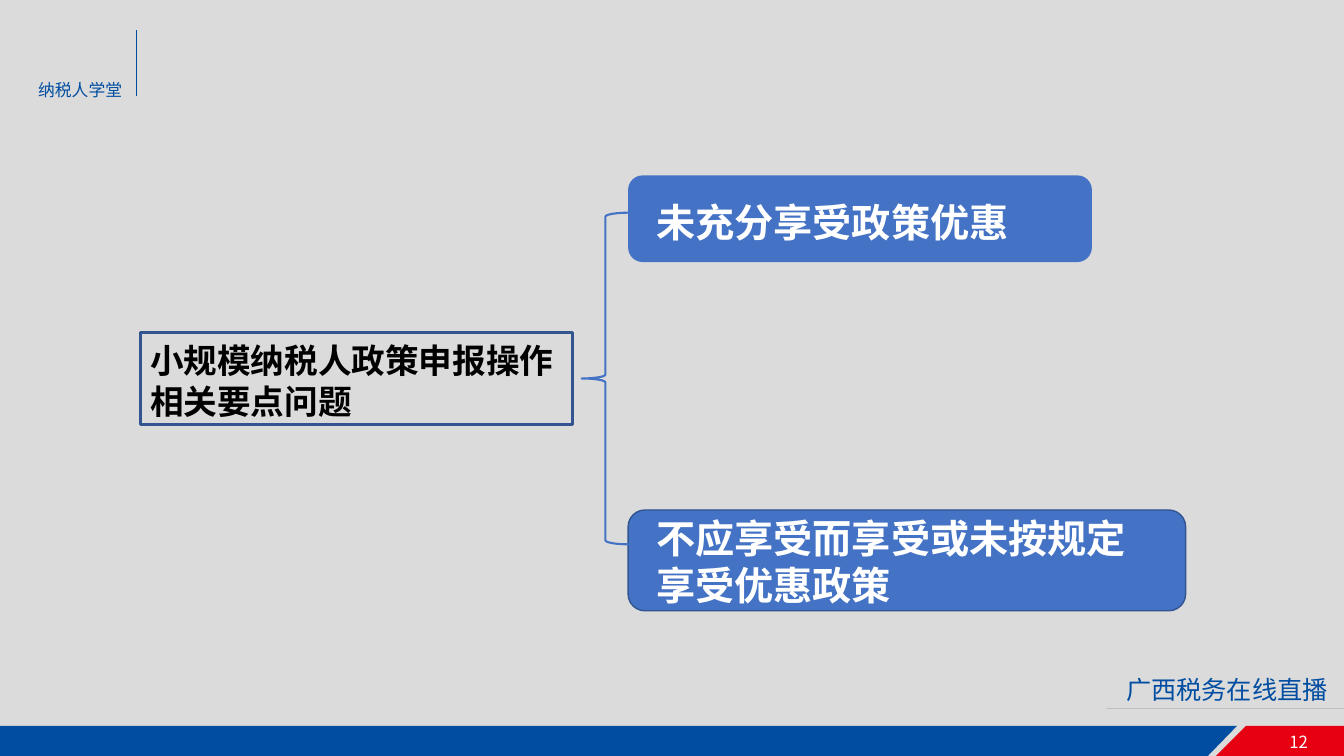
from lxml import etree
from pptx import Presentation
from pptx.dml.color import RGBColor
from pptx.enum.shapes import MSO_CONNECTOR, MSO_SHAPE
from pptx.enum.text import MSO_ANCHOR, PP_ALIGN
from pptx.oxml.ns import qn
from pptx.util import Inches, Pt

FONT = "Noto Sans CJK SC"
NAVY, RED, GREY = "004DA1", "E60012", "BFBFBF"
BLUE, OUTLINE = "4472C4", "325491"
WHITE, BLACK, BACKGROUND = "FFFFFF", "000000", "DBDBDB"
STRAIGHT = MSO_CONNECTOR.STRAIGHT
RECTANGLE = MSO_SHAPE.RECTANGLE
ROUNDED = MSO_SHAPE.FLOWCHART_ALTERNATE_PROCESS
BRACE = MSO_SHAPE.LEFT_BRACE
TOP, LEFT = MSO_ANCHOR.TOP, PP_ALIGN.LEFT


def rgb(color):
    return RGBColor.from_string(color)


def style(shape, fill=None, line=None, width=1):
    shape.shadow.inherit = False
    if fill:
        shape.fill.solid()
        shape.fill.fore_color.rgb = rgb(fill)
    else:
        shape.fill.background()
    if line:
        shape.line.color.rgb = rgb(line)
        shape.line.width = Pt(width)
    else:
        shape.line.fill.background()


def write(frame, lines, size, color, bold=False):
    frame.word_wrap = True
    frame.vertical_anchor = TOP
    # Fixed line pitch, with the first line lowered in proportion to its size
    frame.margin_top = Inches(0.05 + 0.08 * size / 72)
    for index, line in enumerate(lines):
        paragraph = frame.add_paragraph() if index else frame.paragraphs[0]
        paragraph.text = line
        paragraph.alignment = LEFT
        paragraph.line_spacing = Pt(1.2 * size)
        font = paragraph.font
        font.name, font.size, font.bold = FONT, Pt(size), bold
        font.color.rgb = rgb(color)
        properties = paragraph._p.pPr.find(qn("a:defRPr"))
        east_asian = etree.SubElement(properties, qn("a:ea"))
        east_asian.set("typeface", FONT)


def add_label(slide, box, text, size, color, bold=False):
    label = slide.shapes.add_textbox(*map(Inches, box))
    write(label.text_frame, [text], size, color, bold)


def add_box(slide, kind, box, fill=None, line=None, width=1):
    shape = slide.shapes.add_shape(kind, *map(Inches, box))
    style(shape, fill, line, width)
    return shape


def add_rule(slide, start, end, color):
    rule = slide.shapes.add_connector(STRAIGHT, *map(Inches, start + end))
    rule.line.color.rgb = rgb(color)
    rule.line.width = Pt(0.5)
    etree.SubElement(rule._element.spPr, qn("a:effectLst"))


def add_band(slide, points, fill):
    corners = [(Inches(x), Inches(y)) for x, y in points]
    builder = slide.shapes.build_freeform(*corners[0])
    builder.add_line_segments(corners[1:], close=True)
    style(builder.convert_to_shape(), fill)


def main():
    deck = Presentation()
    deck.slide_width, deck.slide_height = Inches(13.33), Inches(7.5)
    slide = deck.slides.add_slide(deck.slide_layouts[6])
    slide.background.fill.solid()
    slide.background.fill.fore_color.rgb = rgb(BACKGROUND)

    # Footer bands and page number
    top, bottom = 7.2, 7.52
    add_band(slide, [(0, top), (12.27, top), (11.96, bottom), (0, bottom)], NAVY)
    add_band(slide, [(12.36, top), (13.33, top), (13.33, bottom), (12.04, bottom)], RED)
    add_label(slide, (12.69, top, 0.54, 0.4), "12", 12, WHITE)

    # Header and broadcast captions with their rules
    add_rule(slide, (1.35, 0.3), (1.35, 0.95), NAVY)
    add_rule(slide, (10.97, 7.03), (13.37, 7.03), GREY)
    add_label(slide, (0.28, 0.73, 1.08, 0.3), "纳税人学堂", 12, NAVY)
    add_label(slide, (11.07, 6.62, 2.59, 0.4), "广西税务在线直播", 18, NAVY)

    # Topic and the brace that splits it
    topic = add_box(slide, RECTANGLE, (1.39, 3.3, 4.29, 0.91), line=OUTLINE, width=2.25)
    write(topic.text_frame, ["小规模纳税人政策申报操作", "相关要点问题"], 24, BLACK, True)

    # Two branches
    branches = [
        ((6.23, 5.06, 5.53, 1), OUTLINE, (6.41, 5.02, 5.12, 1.04),
         "不应享受而享受或未按规定享受优惠政策"),
        ((6.23, 1.74, 4.6, 0.86), None, (6.41, 1.89, 3.98, 0.57),
         "未充分享受政策优惠"),
    ]
    for panel, outline, label, text in branches:
        add_box(slide, ROUNDED, panel, BLUE, outline)
        add_label(slide, label, text, 28, WHITE, True)
    add_box(slide, BRACE, (5.77, 2.11, 0.47, 3.29), line=BLUE, width=1.5)

    deck.save("out.pptx")


if __name__ == "__main__":
    main()
